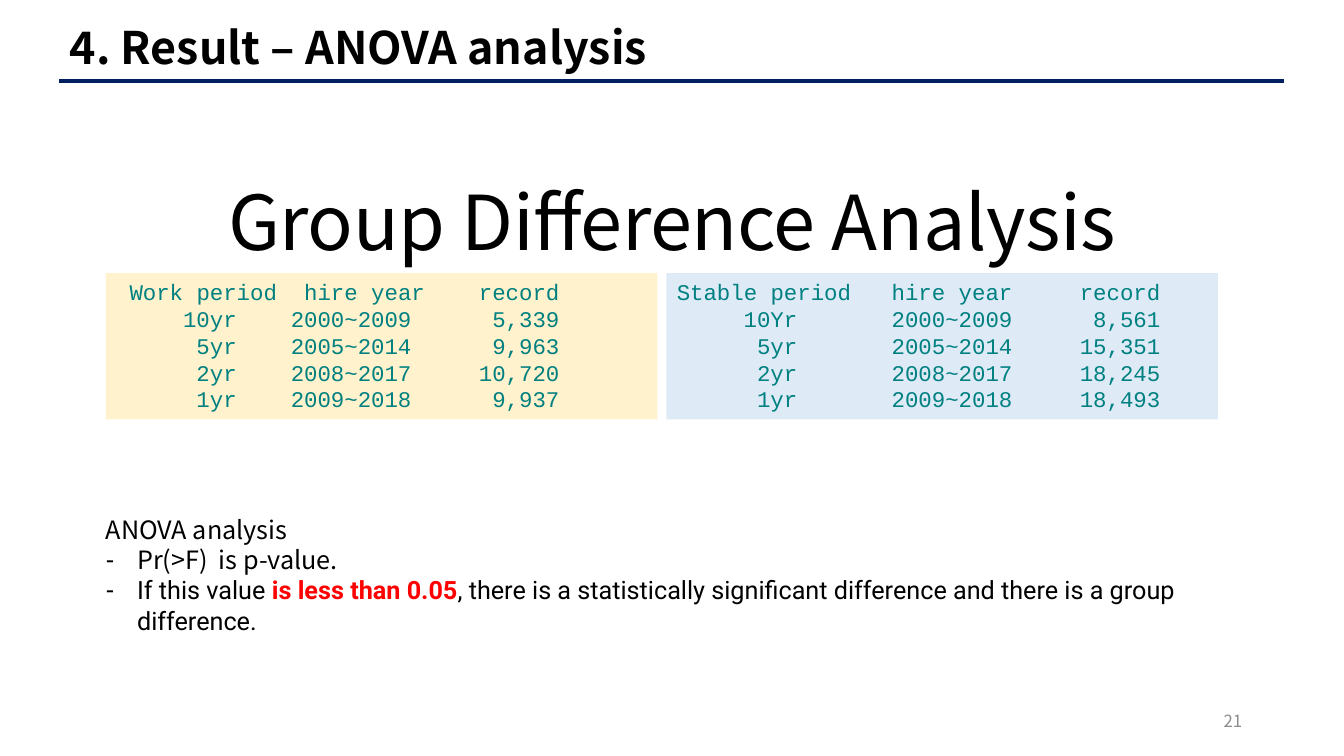
from lxml import etree
from pptx import Presentation
from pptx.dml.color import RGBColor
from pptx.enum.shapes import MSO_CONNECTOR, MSO_SHAPE
from pptx.enum.text import MSO_ANCHOR, MSO_AUTO_SIZE, PP_ALIGN
from pptx.oxml.ns import qn
from pptx.util import Inches, Pt

LEFT, CENTER, RIGHT = PP_ALIGN.LEFT, PP_ALIGN.CENTER, PP_ALIGN.RIGHT
TOP, MIDDLE = MSO_ANCHOR.TOP, MSO_ANCHOR.MIDDLE
RECT, STRAIGHT = MSO_SHAPE.RECTANGLE, MSO_CONNECTOR.STRAIGHT
FIXED = MSO_AUTO_SIZE.NONE
SANS, ROBOTO, MONO = "Noto Sans CJK KR", "Roboto", "Courier New"
BLACK, TEAL, RED, GRAY = "000000", "008080", "FF0000", "8C8C8C"
CHAR = 16 * 0.6 / 72

WORK = [
    ("Work period", "hire year", "record"),
    ("10yr", "2000~2009", "5,339"),
    ("5yr", "2005~2014", "9,963"),
    ("2yr", "2008~2017", "10,720"),
    ("1yr", "2009~2018", "9,937"),
]
STABLE = [
    ("Stable period", "hire year", "record"),
    ("10Yr", "2000~2009", "8,561"),
    ("5yr", "2005~2014", "15,351"),
    ("2yr", "2008~2017", "18,245"),
    ("1yr", "2009~2018", "18,493"),
]


def color(code):
    return RGBColor.from_string(code)


def place(shape, left, top, width, height):
    shape.left, shape.top = Inches(left), Inches(top)
    shape.width, shape.height = Inches(width), Inches(height)


def setup(shape, anchor=TOP):
    frame = shape.text_frame
    frame.word_wrap = True
    frame.auto_size = FIXED
    frame.vertical_anchor = anchor
    return frame


def add_para(frame, align=LEFT, space=1.0):
    first = frame.paragraphs[0]
    para = frame.add_paragraph() if first.runs else first
    para.alignment = align
    para.line_spacing = space
    para.space_before = para.space_after = Pt(0)
    return para


def add_run(para, text, size, code=BLACK, face=SANS, bold=False):
    run = para.add_run()
    run.text = text
    font = run.font
    font.size, font.name, font.bold = Pt(size), face, bold
    font.color.rgb = color(code)
    return run


def add_text(slide, box, text, size, code, align, anchor, space=1.0):
    shape = slide.shapes.add_textbox(*map(Inches, box))
    para = add_para(setup(shape, anchor), align, space)
    return add_run(para, text, size, code)


def set_bullet(para, mark=None):
    props = para._p.get_or_add_pPr()
    hang = Inches(0.31) if mark else 0
    props.set("marL", str(hang))
    props.set("indent", str(-hang))
    if mark:
        etree.SubElement(props, qn("a:buChar")).set("char", mark)
    else:
        etree.SubElement(props, qn("a:buNone"))


def set_tabs(para, stops):
    tabs = etree.SubElement(para._p.get_or_add_pPr(), qn("a:tabLst"))
    for stop in stops:
        tab = etree.SubElement(tabs, qn("a:tab"))
        tab.set("pos", str(Inches(stop * CHAR)))
        tab.set("algn", "r")


def set_edge(run, code, width):
    props = run.font._element
    props.set("spc", "-30")
    edge = etree.Element(qn("a:ln"), w=str(Pt(width)))
    fill = etree.SubElement(edge, qn("a:solidFill"))
    etree.SubElement(fill, qn("a:srgbClr")).set("val", code)
    props.insert(0, edge)


def add_title(slide, text):
    title = slide.shapes.title
    place(title, 0.59, 0.26, 10.04, 0.47)
    title.fill.solid()
    title.fill.fore_color.rgb = color("FFFFFF")
    add_run(add_para(setup(title, MIDDLE), space=0.9), text, 32, bold=True)


def add_rule(slide):
    ends = map(Inches, (0.59, 0.8, 12.73, 0.8))
    rule = slide.shapes.add_connector(STRAIGHT, *ends)
    rule.line.color.rgb = color("002060")
    rule.line.width = Pt(3)
    etree.SubElement(rule._element.spPr, qn("a:effectLst"))


def add_panel(slide, left, fill, rows, heads, stops):
    box = map(Inches, (left, 2.71, 5.47, 1.45))
    panel = slide.shapes.add_shape(RECT, *box)
    panel.shadow.inherit = False
    panel.fill.solid()
    panel.fill.fore_color.rgb = color(fill)
    panel.line.fill.background()
    frame = setup(panel)
    for row in rows:
        para = add_para(frame)
        set_tabs(para, heads if row is rows[0] else stops)
        add_run(para, "".join("\t" + cell for cell in row), 16, TEAL, MONO)


def add_notes(slide):
    body = slide.placeholders[1]
    place(body, 0.95, 5.05, 12.04, 1.01)
    frame = setup(body)
    head = add_para(frame)
    set_bullet(head)
    add_run(head, "ANOVA analysis", 18)
    item = add_para(frame)
    set_bullet(item, "-")
    add_run(item, "Pr(>F)  is p-value.", 18)
    item = add_para(frame)
    set_bullet(item, "-")
    add_run(item, "If this value ", 18, face=ROBOTO)
    add_run(item, "is less than 0.05", 18, RED, ROBOTO, True)
    add_run(item, ", there is a statistically significant difference "
            "and there is a group difference.", 18, face=ROBOTO)


def main():
    deck = Presentation()
    deck.slide_width, deck.slide_height = Inches(13.33), Inches(7.5)
    slide = deck.slides.add_slide(deck.slide_layouts[1])
    add_title(slide, "4. Result – ANOVA analysis")
    add_rule(slide)
    add_text(slide, (9.42, 6.95, 3, 0.4), "21", 12, GRAY, RIGHT, MIDDLE)
    add_panel(slide, 1.05, "FFF2CC", WORK, (12, 23, 33), (9, 22, 33))
    add_panel(slide, 6.61, "DEEBF7", STABLE, (13, 25, 36), (9, 25, 36))
    add_notes(slide)
    head = add_text(slide, (0, 1.24, 13.33, 1.29), "Group Difference Analysis",
                    54, BLACK, CENTER, TOP, 1.5)
    set_edge(head, "404040", 0.25)
    deck.save("out.pptx")


if __name__ == "__main__":
    main()
